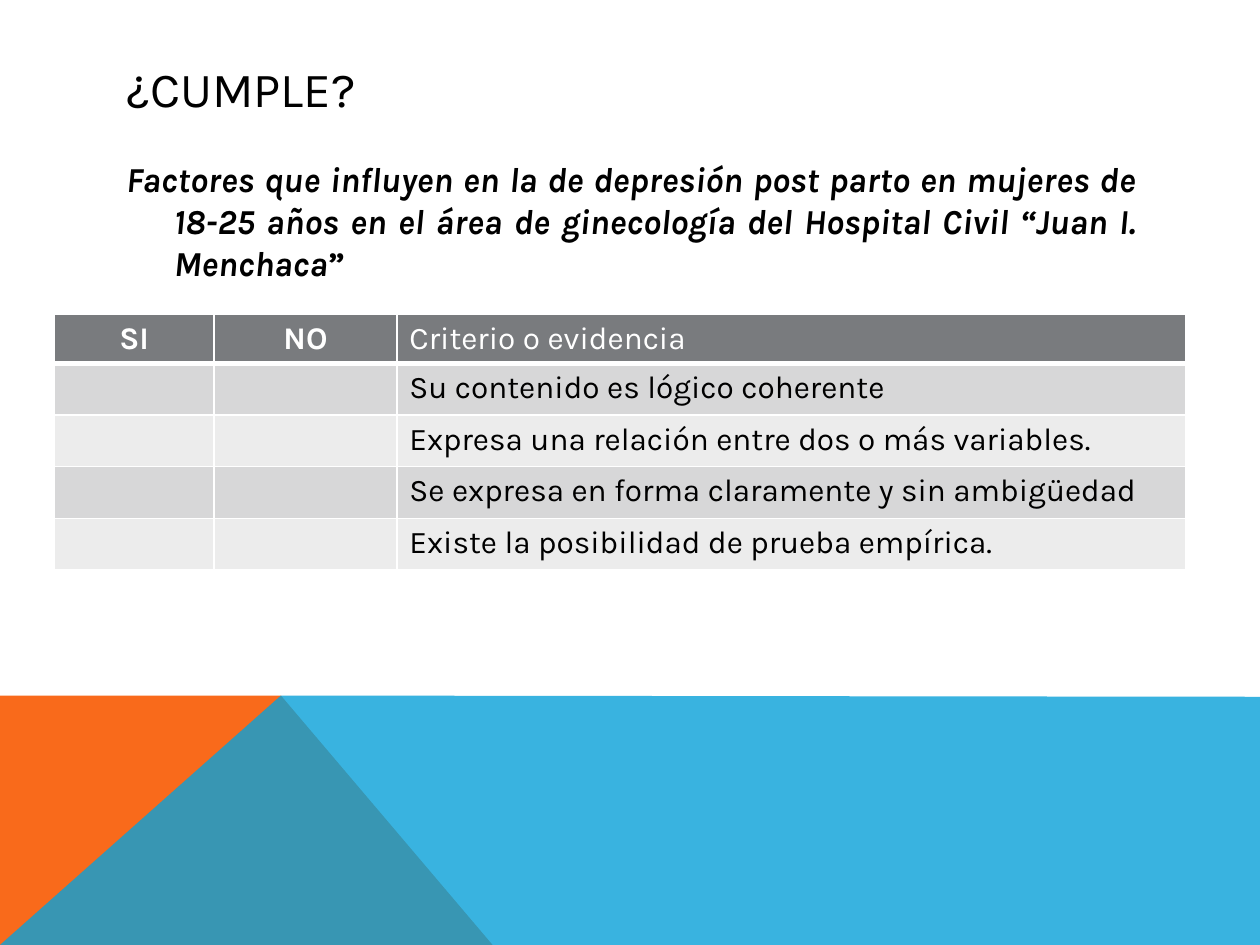
from lxml import etree
from pptx import Presentation
from pptx.dml.color import RGBColor
from pptx.enum import text
from pptx.oxml import ns
from pptx.util import Inches, Pt

COLORS = {
    "ink": "000000", "white": "FFFFFF", "orange": "F96A1B", "blue": "08A1D9",
    "header": "797B7E", "odd": "D7D7D8", "even": "ECECEC",
}
CRITERIA = [
    "Su contenido es lógico coherente",
    "Expresa una relación entre dos o más variables.",
    "Se expresa en forma claramente y sin ambigüedad",
    "Existe la posibilidad de prueba empírica.",
]
ALIGN = text.PP_ALIGN
ANCHOR = text.MSO_ANCHOR


def color(name):
    return RGBColor.from_string(COLORS[name])


class SlideMaker:
    font = "Karla"

    def __init__(self, slide):
        self.slide = slide

    def add_words(self, paragraph, words, ink="ink", align=ALIGN.LEFT, **style):
        paragraph.alignment = align
        run = paragraph.add_run()
        run.text = words
        run.font.color.rgb = color(ink)
        for name, value in {"name": self.font, **style}.items():
            setattr(run.font, name, value)

    def place(self, holder, box, anchor):
        for side, inches in zip(("left", "top", "width", "height"), box):
            setattr(holder, side, Inches(inches))
        frame = holder.text_frame
        frame.word_wrap = True
        frame.auto_size = text.MSO_AUTO_SIZE.NONE
        frame.vertical_anchor = anchor
        return frame.paragraphs[0]

    def hang(self, paragraph, inches):
        props = paragraph._p.get_or_add_pPr()
        props.set("marL", str(Inches(inches)))
        props.set("indent", str(-Inches(inches)))
        etree.SubElement(props, ns.qn("a:buNone"))

    def polygon(self, points, fill, alpha=None):
        corners = [(Inches(x), Inches(y)) for x, y in points]
        builder = self.slide.shapes.build_freeform(*corners[0], scale=1.0)
        builder.add_line_segments(corners[1:], close=True)
        shape = builder.convert_to_shape()
        shape.shadow.inherit = False
        shape.line.fill.background()
        shape.fill.solid()
        shape.fill.fore_color.rgb = color(fill)
        if alpha:
            tint = shape._element.spPr.find(".//" + ns.qn("a:srgbClr"))
            etree.SubElement(tint, ns.qn("a:alpha"), val=str(alpha * 1000))

    def table(self, left, top, widths, heights):
        grid = self.slide.shapes.add_table(
            len(heights), len(widths), Inches(left), Inches(top),
            Inches(sum(widths)), Inches(sum(heights))).table
        for column, width in zip(grid.columns, widths):
            column.width = Inches(width)
        for row, height in zip(grid.rows, heights):
            row.height = Inches(height)
        return grid

    def paint(self, cell, fill, top=1, bottom=1):
        cell.fill.solid()
        cell.fill.fore_color.rgb = color(fill)
        props = cell._tc.get_or_add_tcPr()
        edges = {"L": 1, "R": 1, "T": top, "B": bottom}
        for index, (side, points) in enumerate(edges.items()):
            line = etree.Element(ns.qn(f"a:ln{side}"), w=str(Pt(points)))
            solid = etree.SubElement(line, ns.qn("a:solidFill"))
            etree.SubElement(solid, ns.qn("a:srgbClr"), val=COLORS["white"])
            props.insert(index, line)


def main():
    deck = Presentation()
    deck.slide_width, deck.slide_height = Inches(10), Inches(7.5)
    slide = deck.slides.add_slide(deck.slide_layouts[1])
    maker = SlideMaker(slide)

    # Coloured base
    peak, floor = (2.23, 5.52), 7.5
    maker.polygon([(0, floor), (0, 5.52), peak, (3.91, floor)], "orange")
    maker.polygon([(0, floor), peak, (10, 5.53), (10, floor)], "blue", alpha=80)

    # Title and research topic
    question = maker.place(slide.shapes.title, (0.9, 0.4, 8.22, 0.6), ANCHOR.MIDDLE)
    maker.add_words(question, "¿CUMPLE?", size=Pt(28))
    topic = maker.place(slide.placeholders[1], (0.9, 1.2, 8.22, 1.05), ANCHOR.TOP)
    topic.space_before = Pt(8)
    maker.hang(topic, 0.38)
    for words, italic in [
        ("Factores que influyen en la de depresión post parto en mujeres de "
         "18-25 años en el área de ginecología del Hospital Civil “Juan I. Menchaca", True),
        ("”", False),
    ]:
        maker.add_words(topic, words, align=ALIGN.JUSTIFY, size=Pt(20), bold=True, italic=italic)

    # Checklist
    checklist = maker.table(0.43, 2.49, [1.27, 1.45, 6.26],
                            [0.38] + [0.41] * len(CRITERIA))
    for column, heading in enumerate(["SI", "NO", "Criterio o evidencia"]):
        cell = checklist.cell(0, column)
        answer = column < 2
        maker.paint(cell, "header", bottom=3)
        cell.vertical_anchor = ANCHOR.MIDDLE if answer else ANCHOR.TOP
        maker.add_words(cell.text_frame.paragraphs[0], heading, "white",
                        ALIGN.CENTER if answer else ALIGN.LEFT, size=Pt(18), bold=answer)
    for row, criterion in enumerate(CRITERIA, start=1):
        for column in range(3):
            maker.paint(checklist.cell(row, column), "odd" if row % 2 else "even",
                        top=3 if row == 1 else 1)
        maker.add_words(checklist.cell(row, 2).text_frame.paragraphs[0], criterion,
                        size=Pt(18), bold=False)

    deck.save("out.pptx")


if __name__ == "__main__":
    main()
